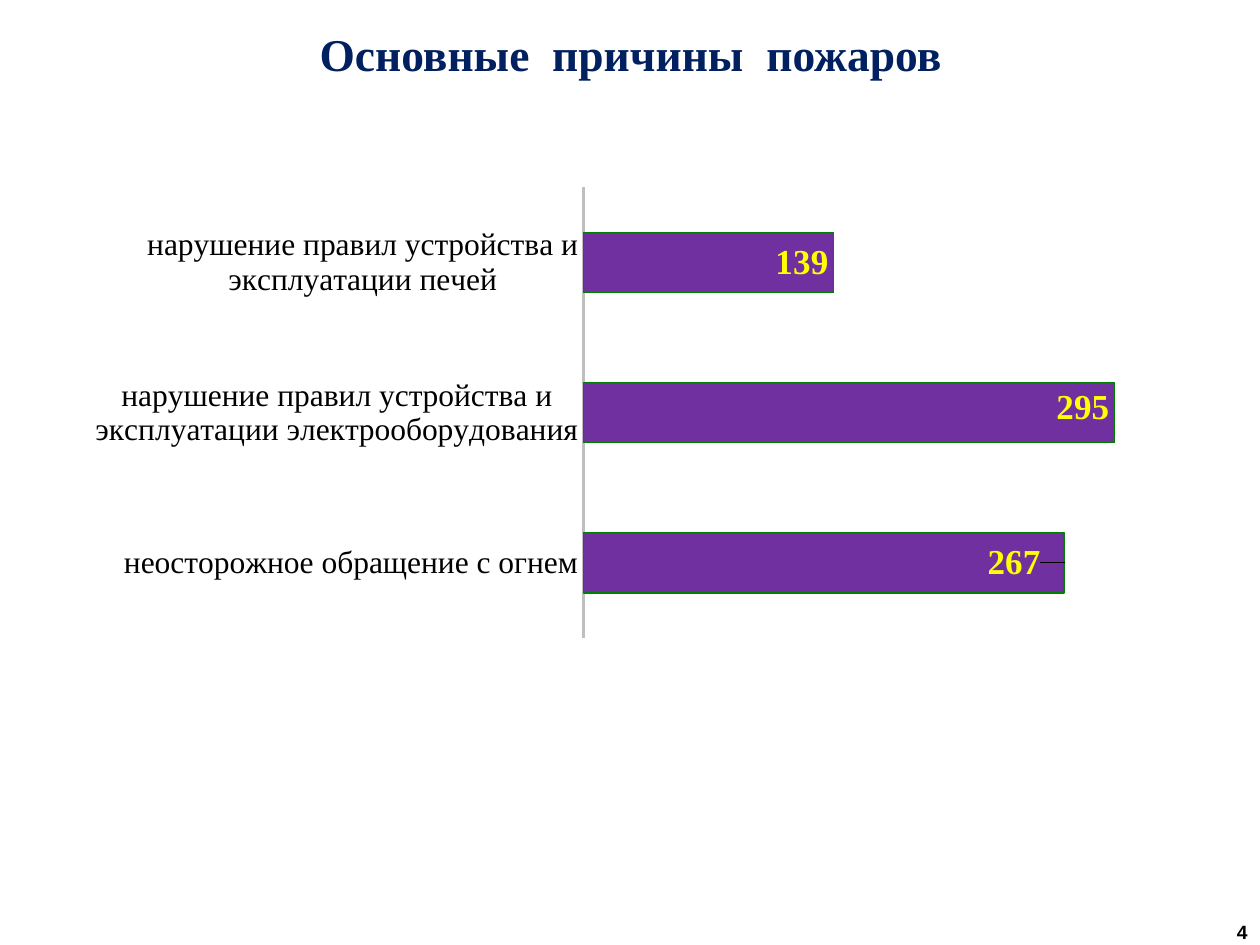
from lxml.etree import SubElement as Sub
from pptx import Presentation
from pptx.chart.data import CategoryChartData as Data
from pptx.dml.color import RGBColor as RGB
from pptx.enum.chart import XL_CHART_TYPE as Kind, XL_LABEL_POSITION as Spot, XL_TICK_MARK as Tick
from pptx.enum.text import PP_ALIGN as Align
from pptx.oxml import parse_xml
from pptx.oxml.ns import nsdecls, qn
from pptx.util import Pt

NAVY, BLACK, GREY = RGB(0, 0x20, 0x60), RGB(0, 0, 0), RGB(0xBF, 0xBF, 0xBF)
PURPLE, GREEN, YELLOW = RGB(0x70, 0x30, 0xA0), RGB(0, 0x80, 0), RGB(0xFF, 0xFF, 0)
SERIF, SANS = "Times New Roman", "Arial"
SCALE = 914400 / 126

TEXTS = [
    ("Основные  причины  пожаров", (129, 20, 1004, 68), Align.CENTER, 26, SERIF, NAVY),
    ("4", (998, 914, 262, 31), Align.RIGHT, 11, SANS, BLACK),
]
CAUSES = [
    ("неосторожное обращение с огнем", 267, (-0.015, 0)),
    ("нарушение правил устройства и эксплуатации электрооборудования", 295, (0, -0.006)),
    ("нарушение правил устройства и эксплуатации печей", 139, (0, 0)),
]
FRAME = (-5, 105, 1231, 809)
PLOT = {"x": 0.478, "y": 0.102, "w": 0.512, "h": 0.557}


def emu(box):
    return [round(n * SCALE) for n in box]


def style(font, size, name, color, bold=False):
    font.size, font.name, font.bold = Pt(size), name, bold
    font.color.rgb = color


def layout(parts, inner=False):
    node = parse_xml(f"<c:layout {nsdecls('c')}/>")
    spot = Sub(node, qn("c:manualLayout"))
    if inner:
        Sub(spot, qn("c:layoutTarget"), val="inner")
        for key in "xy":
            Sub(spot, qn(f"c:{key}Mode"), val="edge")
    for key, val in parts.items():
        Sub(spot, qn(f"c:{key}"), val=str(val))
    return node


def add_text(slide, text, box, align, size, name, color):
    frame = slide.shapes.add_textbox(*emu(box)).text_frame
    frame.word_wrap = True
    para = frame.paragraphs[0]
    para.alignment = align
    run = para.add_run()
    run.text = text
    style(run.font, size, name, color, True)


def add_bars(slide):
    data = Data()
    data.categories = [name for name, _, _ in CAUSES]
    data.add_series("Series 1", [val for _, val, _ in CAUSES])
    chart = slide.shapes.add_chart(Kind.BAR_STACKED, *emu(FRAME), data).chart
    chart.has_legend = chart.has_title = False
    style(chart.font, 10, SERIF, BLACK)

    area = chart._chartSpace.chart.plotArea
    for old in area.findall(qn("c:layout")):
        area.remove(old)
    area.insert(0, layout(PLOT, True))

    axis = chart.category_axis
    axis.major_tick_mark = axis.minor_tick_mark = Tick.NONE
    axis.format.line.color.rgb = GREY
    axis.format.line.width = Pt(1.5)
    style(axis.tick_labels.font, 18, SERIF, BLACK)
    scale = chart.value_axis
    scale.minimum_scale, scale.maximum_scale = 0, 350
    scale.has_major_gridlines = scale.visible = False

    plot = chart.plots[0]
    plot.gap_width, plot.overlap, plot.vary_by_categories = 150, 100, False
    bars = plot.series[0]
    bars.format.fill.solid()
    bars.format.fill.fore_color.rgb = PURPLE
    bars.format.line.color.rgb = GREEN
    bars.format.line.width = Pt(0.75)
    bars.data_labels.show_value = True
    for i, (_, _, shift) in enumerate(CAUSES):
        label = bars.points[i].data_label
        style(label.font, 20, SERIF, YELLOW, True)
        label.position = Spot.INSIDE_END
        if any(shift):
            label._dLbl.insert(1, layout(dict(zip("xy", shift))))
    style(bars.data_labels.font, 20, SERIF, YELLOW, True)
    bars.data_labels.position = Spot.INSIDE_END


def main():
    """Build the slide on the main causes of fires."""
    deck = Presentation()
    deck.slide_width, deck.slide_height = emu((1260, 945))
    slide = deck.slides.add_slide(deck.slide_layouts[6])
    add_text(slide, *TEXTS[0])
    add_bars(slide)
    add_text(slide, *TEXTS[1])
    deck.save("out.pptx")


if __name__ == "__main__":
    main()
